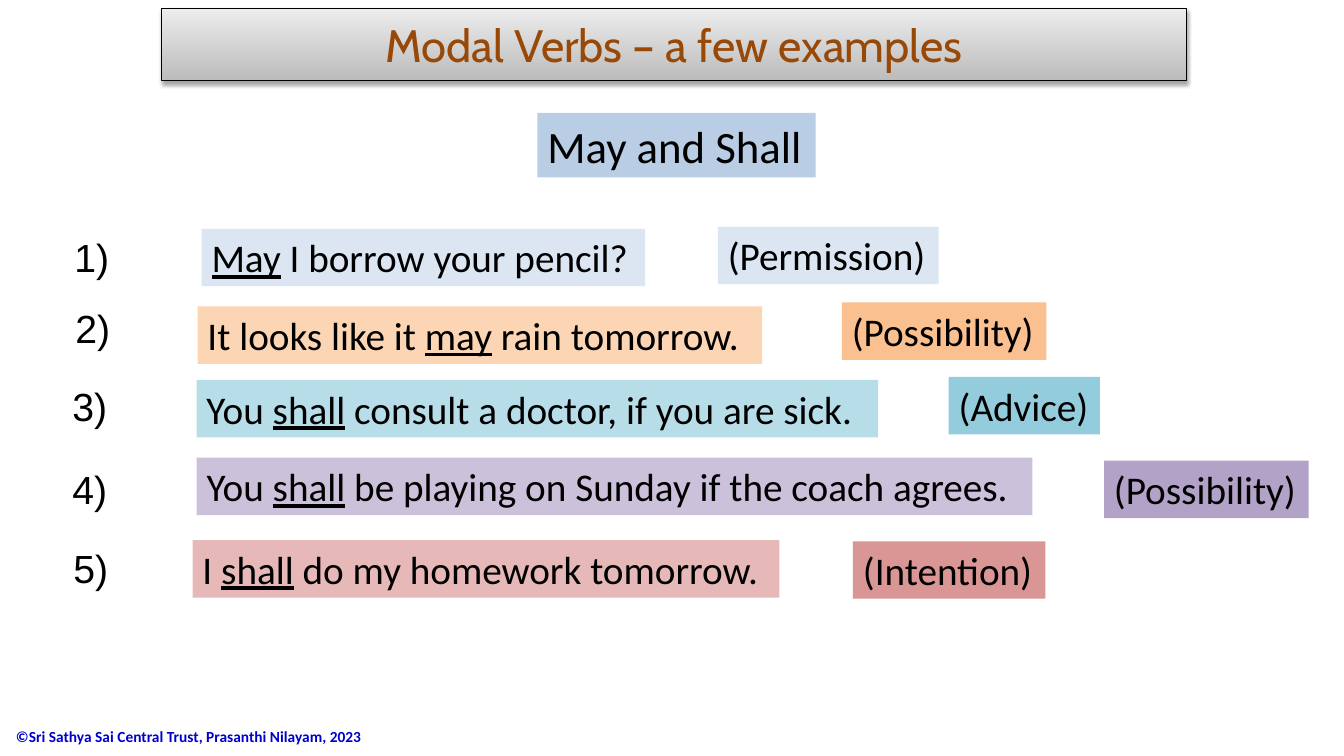
"""Build the slide of modal verb examples for may and shall."""
from lxml.etree import fromstring
from pptx import Presentation
from pptx.dml.color import RGBColor
from pptx.enum.shapes import MSO_SHAPE
from pptx.enum.text import MSO_ANCHOR, MSO_AUTO_SIZE, PP_ALIGN
from pptx.util import Inches, Pt

COLOURS = {
    "black": "000000", "title": "984807", "title_top": "EDEDED",
    "title_bottom": "BCBCBC", "footer": "0000CC", "heading": "B9CDE5",
    "pale_blue": "DCE6F2", "peach": "FCD5B5", "orange": "FAC090",
    "pale_teal": "B7DEE8", "teal": "93CDDD", "lilac": "CCC1DA",
    "purple": "B3A2C7", "pink": "E6B9B8", "red": "D99694",
}
TITLE = "Modal Verbs – a few examples"
HEADING = "May and Shall"
FOOTER = "©Sri Sathya Sai Central Trust, Prasanthi Nilayam, 2023"
ROW_HEIGHT = 0.57

# Each part of a row: text pieces, left, top, width, fill; the second piece is underlined.
EXAMPLES = [
    ((0.64, 2.27), (["", "May", " I borrow your pencil?"], 2, 2.27, 4.4, "pale_blue"),
     ("(Permission)", 7.12, 2.25, 2.19, "pale_blue")),
    ((0.65, 2.97), (["It looks like it ", "may", " rain tomorrow."], 1.96, 3.04, 5.6, "peach"),
     ("(Possibility)", 8.35, 3, 2.03, "orange")),
    ((0.62, 3.74), (["You ", "shall", " consult a doctor, if you are sick."], 1.95, 3.77, 6.76, "pale_teal"),
     ("(Advice)", 9.41, 3.74, 1.5, "teal")),
    ((0.62, 4.57), (["You ", "shall", " be playing on Sunday if the coach agrees."], 1.95, 4.54, 8.29, "lilac"),
     ("(Possibility)", 10.95, 4.57, 2.03, "purple")),
    ((0.63, 5.35), (["I ", "shall", " do my homework tomorrow."], 1.91, 5.36, 5.82, "pink"),
     ("(Intention)", 8.46, 5.37, 1.91, "red")),
]
SHADOW = (
    '<a:effectLst xmlns:a="http://schemas.openxmlformats.org/drawingml/2006/main">'
    '<a:outerShdw blurRad="40000" dist="23000" dir="5400000" rotWithShape="0">'
    '<a:srgbClr val="000000"><a:alpha val="35000"/></a:srgbClr>'
    '</a:outerShdw></a:effectLst>'
)


def colour(name):
    return RGBColor.from_string(COLOURS[name])


def style(span, size, font="Calibri", ink="black"):
    span.font.size = Pt(size)
    span.font.name = font
    span.font.color.rgb = colour(ink)


def add_label(slide, pieces, left, top, width, fill=None, height=ROW_HEIGHT,
              size=28, font="Calibri", ink="black"):
    box = slide.shapes.add_textbox(*map(Inches, (left, top, width, height)))
    if fill:
        box.fill.solid()
        box.fill.fore_color.rgb = colour(fill)
    frame = box.text_frame
    frame.word_wrap = False
    frame.auto_size = MSO_AUTO_SIZE.SHAPE_TO_FIT_TEXT
    for index, piece in enumerate(pieces):
        if piece:
            span = frame.paragraphs[0].add_run()
            span.text = piece
            style(span, size, font, ink)
            if index == 1:
                span.font.underline = True
    return box


def add_title(slide):
    banner = slide.shapes.add_shape(
        MSO_SHAPE.ROUND_2_DIAG_RECTANGLE, *map(Inches, (1.6, 0.08, 10.17, 0.72)))
    banner.adjustments[0] = 0
    banner.fill.gradient()
    banner.fill.gradient_angle = 270
    for stop, name in zip(banner.fill.gradient_stops, ("title_top", "title_bottom")):
        stop.color.rgb = colour(name)
    banner.line.color.rgb = colour("black")
    banner.line.width = Pt(0.75)
    banner._element.spPr.append(fromstring(SHADOW))
    frame = banner.text_frame
    frame.text = TITLE
    frame.vertical_anchor = MSO_ANCHOR.MIDDLE
    frame.paragraphs[0].alignment = PP_ALIGN.CENTER
    style(frame.paragraphs[0].runs[0], 32.4, "Cabin", "title")


def main():
    deck = Presentation()
    deck.slide_width, deck.slide_height = Inches(13.33), Inches(7.5)
    slide = deck.slides.add_slide(deck.slide_layouts[6])
    footer = add_label(slide, [FOOTER], 0.06, 7.1, 3.81, height=0.41, size=11, ink="footer")
    footer.text_frame.auto_size = MSO_AUTO_SIZE.NONE
    footer.text_frame.vertical_anchor = MSO_ANCHOR.MIDDLE
    footer.text_frame.paragraphs[0].runs[0].font.bold = True
    add_title(slide)
    heading = add_label(slide, [HEADING], 5.33, 1.12, 2.76, "heading", height=0.64, size=32)
    heading.text_frame.vertical_anchor = MSO_ANCHOR.MIDDLE
    for number, (place, sentence, meaning) in enumerate(EXAMPLES, 1):
        add_label(slide, [f"{number})"], *place, 0.55, font="Arial")
        add_label(slide, *sentence)
        add_label(slide, [meaning[0]], *meaning[1:])
    deck.save("out.pptx")


if __name__ == "__main__":
    main()
